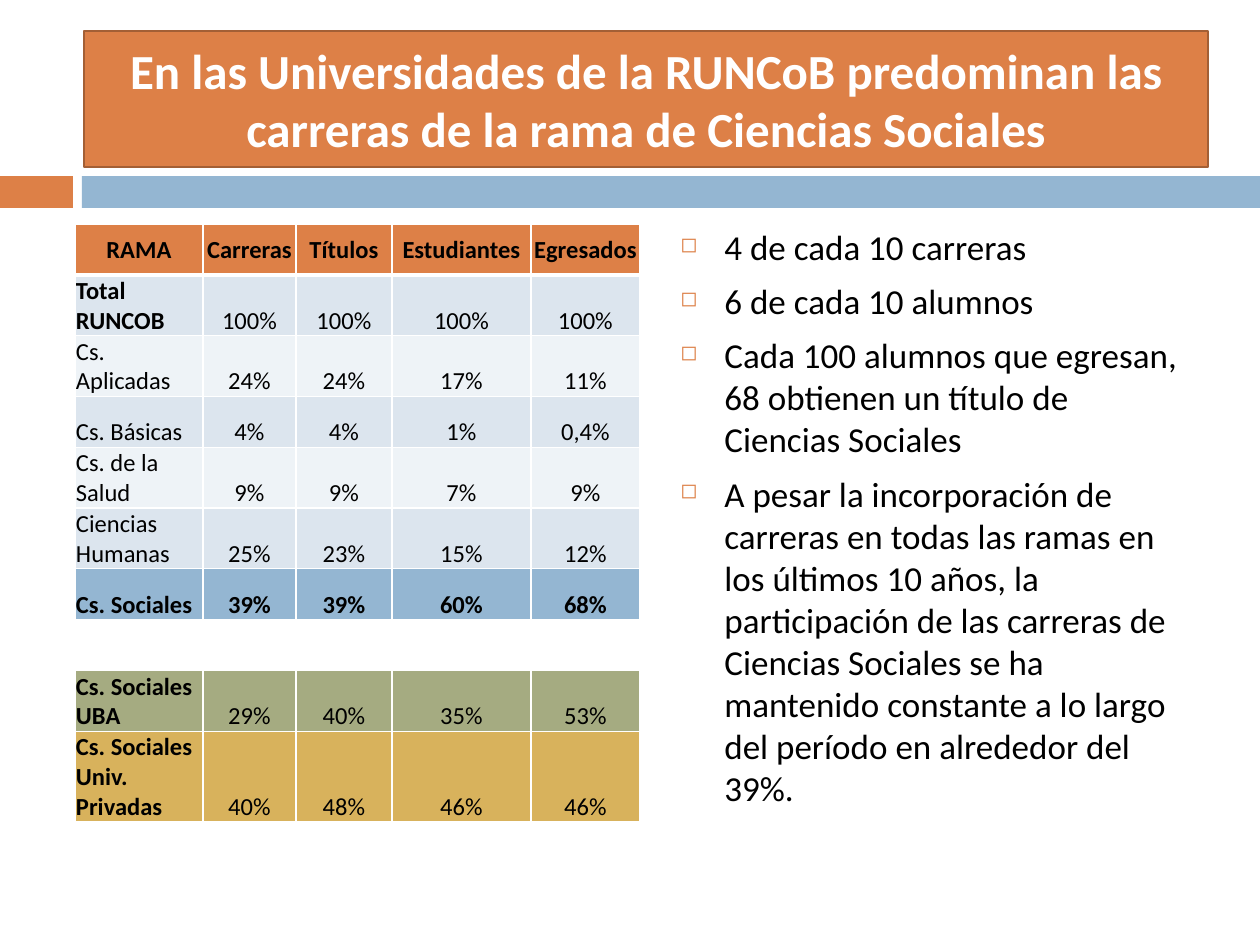
from typing import NamedTuple

from lxml.etree import SubElement as Sub
from pptx import Presentation
from pptx.dml.color import RGBColor as Rgb
from pptx.enum.shapes import MSO_SHAPE as Kind
from pptx.enum.text import MSO_ANCHOR as Anchor, PP_ALIGN as Align
from pptx.oxml.ns import qn
from pptx.util import Emu, Pt

SCALE = 914400 / 126
FACE = "Calibri"
ORANGE = Rgb(0xDD, 0x80, 0x47)
RUST = Rgb(0xA3, 0x5F, 0x35)
BLUE = Rgb(0x94, 0xB6, 0xD2)
PALE = Rgb(0xDC, 0xE5, 0xEE)
LIGHT = Rgb(0xEE, 0xF3, 0xF7)
GREEN = Rgb(0xA5, 0xAB, 0x81)
GOLD = Rgb(0xD8, 0xB2, 0x5C)
WHITE = Rgb(0xFF, 0xFF, 0xFF)
BLACK = Rgb(0, 0, 0)


class Box(NamedTuple):
    x: int
    y: int
    w: int
    h: int


class Row(NamedTuple):
    texts: list[str]
    fill: Rgb
    bold_name: bool = False
    bold_data: bool = False


TITLE = ("En las Universidades de la RUNCoB predominan las "
         "carreras de la rama de Ciencias Sociales")
COLS = [128, 93, 96, 139, 109]
ROW_H = 51
ROWS = [
    Row(["RAMA", "Carreras", "Títulos", "Estudiantes", "Egresados"], ORANGE, True, True),
    Row(["Total RUNCOB", "100%", "100%", "100%", "100%"], PALE, True),
    Row(["Cs. Aplicadas", "24%", "24%", "17%", "11%"], LIGHT),
    Row(["Cs. Básicas", "4%", "4%", "1%", "0,4%"], PALE),
    Row(["Cs. de la Salud", "9%", "9%", "7%", "9%"], LIGHT),
    Row(["Ciencias Humanas", "25%", "23%", "15%", "12%"], PALE),
    Row(["Cs. Sociales", "39%", "39%", "60%", "68%"], BLUE, True, True),
    Row([""] * len(COLS), WHITE),
    Row(["Cs. Sociales UBA", "29%", "40%", "35%", "53%"], GREEN, True),
    Row(["Cs. Sociales Univ. Privadas", "40%", "48%", "46%", "46%"], GOLD, True),
]
POINTS = [
    "4 de cada 10 carreras",
    "6 de cada 10 alumnos",
    "Cada 100 alumnos que egresan, 68 obtienen un título de Ciencias Sociales",
    "A pesar la incorporación de carreras en todas las ramas en los últimos "
    "10 años, la participación de las carreras de Ciencias Sociales se ha "
    "mantenido constante a lo largo del período en alrededor del 39%.",
]


def px(n: int) -> Emu:
    return Emu(round(n * SCALE))


def style(para, size: int, color: Rgb, bold: bool = False) -> None:
    font = para.font
    font.name, font.size, font.bold = FACE, Pt(size), bold
    font.color.rgb = color


def add_rect(shapes, box: Box, fill: Rgb):
    rect = shapes.add_shape(Kind.RECTANGLE, *map(px, box))
    rect.shadow.inherit = False
    rect.fill.solid()
    rect.fill.fore_color.rgb = fill
    rect.line.fill.background()
    return rect


def add_edges(cell, base: int) -> None:
    props = cell._tc.get_or_add_tcPr()
    for i, side in enumerate(("lnL", "lnR", "lnT", "lnB")):
        width = base if side == "lnB" else 1
        edge = props.makeelement(qn(f"a:{side}"), {"w": str(Pt(width))})
        Sub(Sub(edge, qn("a:solidFill")), qn("a:srgbClr"), val=str(WHITE))
        props.insert(i, edge)


def fill_cell(cell, row: Row, col: int, head: bool) -> None:
    cell.margin_left = cell.margin_right = cell.margin_top = px(1)
    cell.margin_bottom = 0
    cell.vertical_anchor = Anchor.MIDDLE if head else Anchor.BOTTOM
    cell.fill.solid()
    cell.fill.fore_color.rgb = row.fill
    cell.text = row.texts[col]
    para = cell.text_frame.paragraphs[0]
    para.alignment = Align.CENTER if head or col else Align.LEFT
    style(para, 14, BLACK, row.bold_data if col else row.bold_name)
    add_edges(cell, 3 if head else 1)


def add_grid(shapes, x: int, y: int) -> None:
    box = Box(x, y, sum(COLS), ROW_H * len(ROWS))
    table = shapes.add_table(len(ROWS), len(COLS), *map(px, box)).table
    for col, width in zip(table.columns, COLS):
        col.width = px(width)
    for r, row in enumerate(ROWS):
        table.rows[r].height = px(ROW_H)
        for c in range(len(COLS)):
            fill_cell(table.cell(r, c), row, c, r == 0)


def add_points(shapes, box: Box) -> None:
    frame = shapes.add_textbox(*map(px, box)).text_frame
    frame.word_wrap = True
    for i, text in enumerate(POINTS):
        para = frame.add_paragraph() if i else frame.paragraphs[0]
        para.text = text
        para.space_before = Pt(7)
        style(para, 20, BLACK)
        props = para._p.get_or_add_pPr()
        props.set("marL", str(px(44)))
        props.set("indent", str(-px(44)))
        # Bullet parts come after spacing and before the default font
        font = props.find(qn("a:defRPr"))
        tint = props.makeelement(qn("a:buClr"), {})
        Sub(tint, qn("a:srgbClr"), val=str(ORANGE))
        size = props.makeelement(qn("a:buSzPct"), {"val": "60000"})
        mark = props.makeelement(qn("a:buChar"), {"char": "◻"})
        for part in (tint, size, mark):
            font.addprevious(part)


def add_title(shapes, box: Box) -> None:
    rect = add_rect(shapes, box, ORANGE)
    rect.line.color.rgb = RUST
    rect.line.width = Pt(1.5)
    frame = rect.text_frame
    frame.word_wrap = True
    frame.vertical_anchor = Anchor.MIDDLE
    para = frame.paragraphs[0]
    para.text = TITLE
    para.alignment = Align.CENTER
    style(para, 28, WHITE, True)


def main() -> None:
    deck = Presentation()
    deck.slide_width, deck.slide_height = px(1260), px(945)
    shapes = deck.slides.add_slide(deck.slide_layouts[6]).shapes
    # Band under the title
    add_rect(shapes, Box(0, 176, 73, 32), ORANGE)
    add_rect(shapes, Box(82, 176, 1178, 32), BLUE)
    # Content
    add_grid(shapes, 75, 224)
    add_points(shapes, Box(668, 219, 535, 728))
    add_title(shapes, Box(84, 31, 1124, 136))
    deck.save("out.pptx")


if __name__ == "__main__":
    main()
